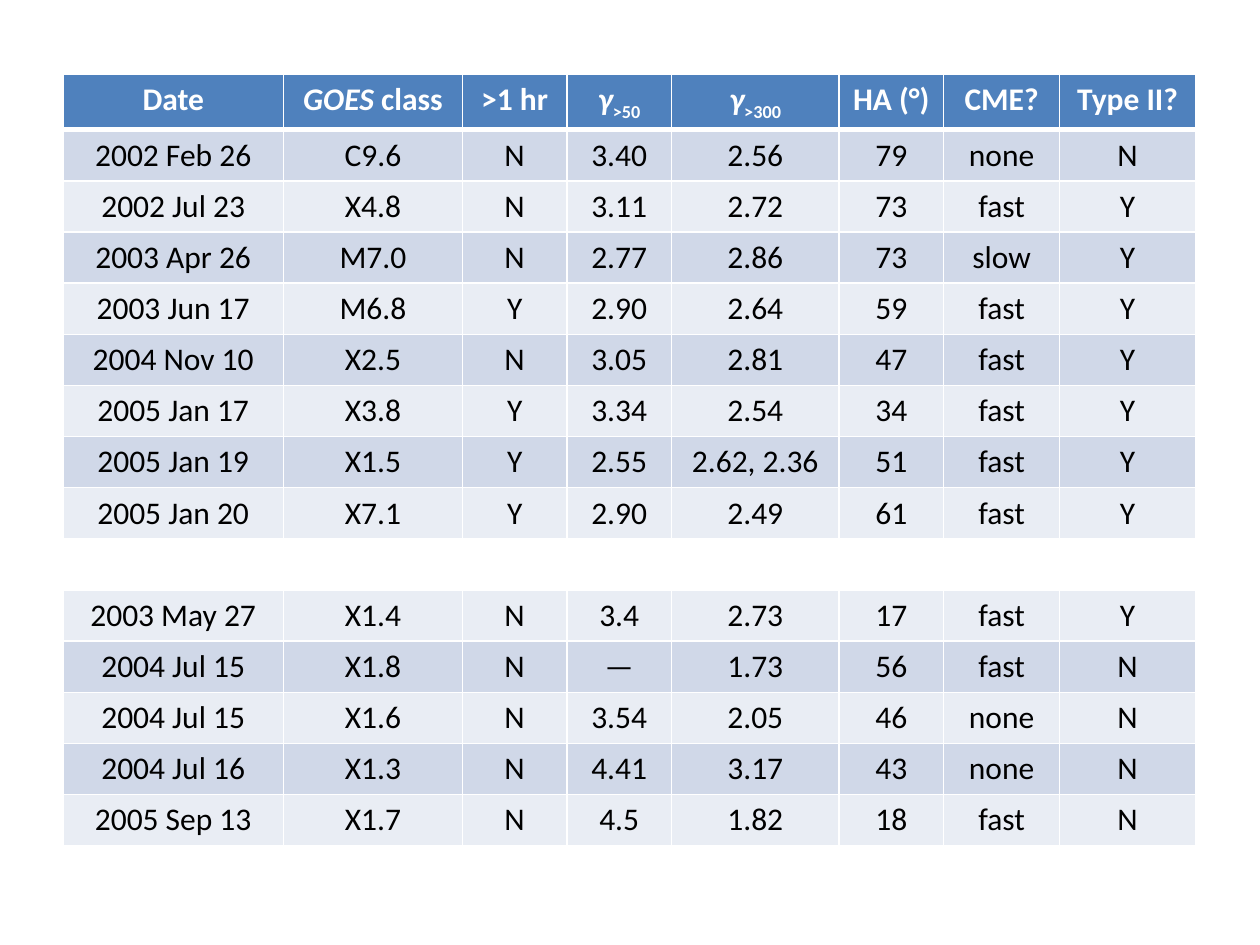
import pptx
import pptx.dml.color
import pptx.enum.text
import pptx.oxml
import pptx.oxml.ns
import pptx.util
from dataclasses import dataclass


@dataclass(frozen=True)
class Theme:
    font: str = "Calibri"
    size: int = 18
    header_fill: str = "4F81BD"
    header_text: str = "FFFFFF"
    body_text: str = "000000"
    bands: tuple = ("E9EDF4", "D0D8E8")
    border: str = "FFFFFF"
    thin: int = 1
    thick: int = 3


THEME = Theme()
SLIDE_SIZE = (10, 7.5)
TABLE_LEFT, TABLE_TOP, TABLE_HEIGHT = 0.5, 0.59, 6.09
COLUMN_WIDTHS = (1.75, 1.42, 0.83, 0.83, 1.33, 0.83, 0.92, 1.08)

# Each header is a list of (text, style) runs.
HEADERS = [
    [("Date", "")],
    [("GOES", "italic"), (" class", "")],
    [(">1 hr", "")],
    [("γ", "italic"), (">50", "subscript")],
    [("γ", "italic"), (">300", "subscript")],
    [("HA (°)", "")],
    [("CME?", "")],
    [("Type II?", "")],
]
LONG_LIST = [
    ("2002 Feb 26", "C9.6", "N", "3.40", "2.56", "79", "none", "N"),
    ("2002 Jul 23", "X4.8", "N", "3.11", "2.72", "73", "fast", "Y"),
    ("2003 Apr 26", "M7.0", "N", "2.77", "2.86", "73", "slow", "Y"),
    ("2003 Jun 17", "M6.8", "Y", "2.90", "2.64", "59", "fast", "Y"),
    ("2004 Nov 10", "X2.5", "N", "3.05", "2.81", "47", "fast", "Y"),
    ("2005 Jan 17", "X3.8", "Y", "3.34", "2.54", "34", "fast", "Y"),
    ("2005 Jan 19", "X1.5", "Y", "2.55", "2.62, 2.36", "51", "fast", "Y"),
    ("2005 Jan 20", "X7.1", "Y", "2.90", "2.49", "61", "fast", "Y"),
]
SHORT_LIST = [
    ("2003 May 27", "X1.4", "N", "3.4", "2.73", "17", "fast", "Y"),
    ("2004 Jul 15", "X1.8", "N", "—", "1.73", "56", "fast", "N"),
    ("2004 Jul 15", "X1.6", "N", "3.54", "2.05", "46", "none", "N"),
    ("2004 Jul 16", "X1.3", "N", "4.41", "3.17", "43", "none", "N"),
    ("2005 Sep 13", "X1.7", "N", "4.5", "1.82", "18", "fast", "N"),
]
GAP_ROW = ("",) * len(HEADERS)
BODY_ROWS = LONG_LIST + [GAP_ROW] + SHORT_LIST


def rgb(value):
    return pptx.dml.color.RGBColor.from_string(value)


def set_borders(cell, top, bottom):
    """Draw all four edges; call before filling, since lines precede the fill in the XML."""
    properties = cell._tc.get_or_add_tcPr()
    widths = {"lnL": THEME.thin, "lnR": THEME.thin, "lnT": top, "lnB": bottom}
    for tag, width in widths.items():
        properties.append(pptx.oxml.parse_xml(
            f'<a:{tag} {pptx.oxml.ns.nsdecls("a")} w="{pptx.util.Pt(width)}">'
            f'<a:solidFill><a:srgbClr val="{THEME.border}"/></a:solidFill></a:{tag}>'
        ))


def write_cell(cell, runs, color, bold):
    paragraph = cell.text_frame.paragraphs[0]
    paragraph.alignment = pptx.enum.text.PP_ALIGN.CENTER
    paragraph.font.name = THEME.font
    paragraph.font.size = pptx.util.Pt(THEME.size)
    paragraph.font.bold = bold
    paragraph.font.color.rgb = rgb(color)
    for text, style in runs:
        run = paragraph.add_run()
        run.text = text
        if style == "italic":
            run.font.italic = True
        elif style == "subscript":
            run._r.get_or_add_rPr().set("baseline", "-25000")


def build_event_table(slide):
    rows = [HEADERS] + [[[(text, "")] if text else [] for text in row] for row in BODY_ROWS]
    inches = pptx.util.Inches
    table = slide.shapes.add_table(
        len(rows), len(HEADERS), inches(TABLE_LEFT), inches(TABLE_TOP),
        inches(sum(COLUMN_WIDTHS)), inches(TABLE_HEIGHT),
    ).table
    table.horz_banding = False
    for column, width in zip(table.columns, COLUMN_WIDTHS):
        column.width = inches(width)

    for row_index, row in enumerate(rows):
        is_header = row_index == 0
        fill = THEME.header_fill if is_header else THEME.bands[row_index % 2]
        color = THEME.header_text if is_header else THEME.body_text
        top = THEME.thick if row_index == 1 else THEME.thin
        bottom = THEME.thick if is_header else THEME.thin
        for column_index, runs in enumerate(row):
            cell = table.cell(row_index, column_index)
            set_borders(cell, top, bottom)
            if runs:
                cell.fill.solid()
                cell.fill.fore_color.rgb = rgb(fill)
            else:
                cell.fill.background()
            write_cell(cell, runs, color, is_header)


def main():
    presentation = pptx.Presentation()
    presentation.slide_width, presentation.slide_height = map(pptx.util.Inches, SLIDE_SIZE)
    blank_layout = presentation.slide_layouts[6]
    build_event_table(presentation.slides.add_slide(blank_layout))
    presentation.save("out.pptx")


if __name__ == "__main__":
    main()
